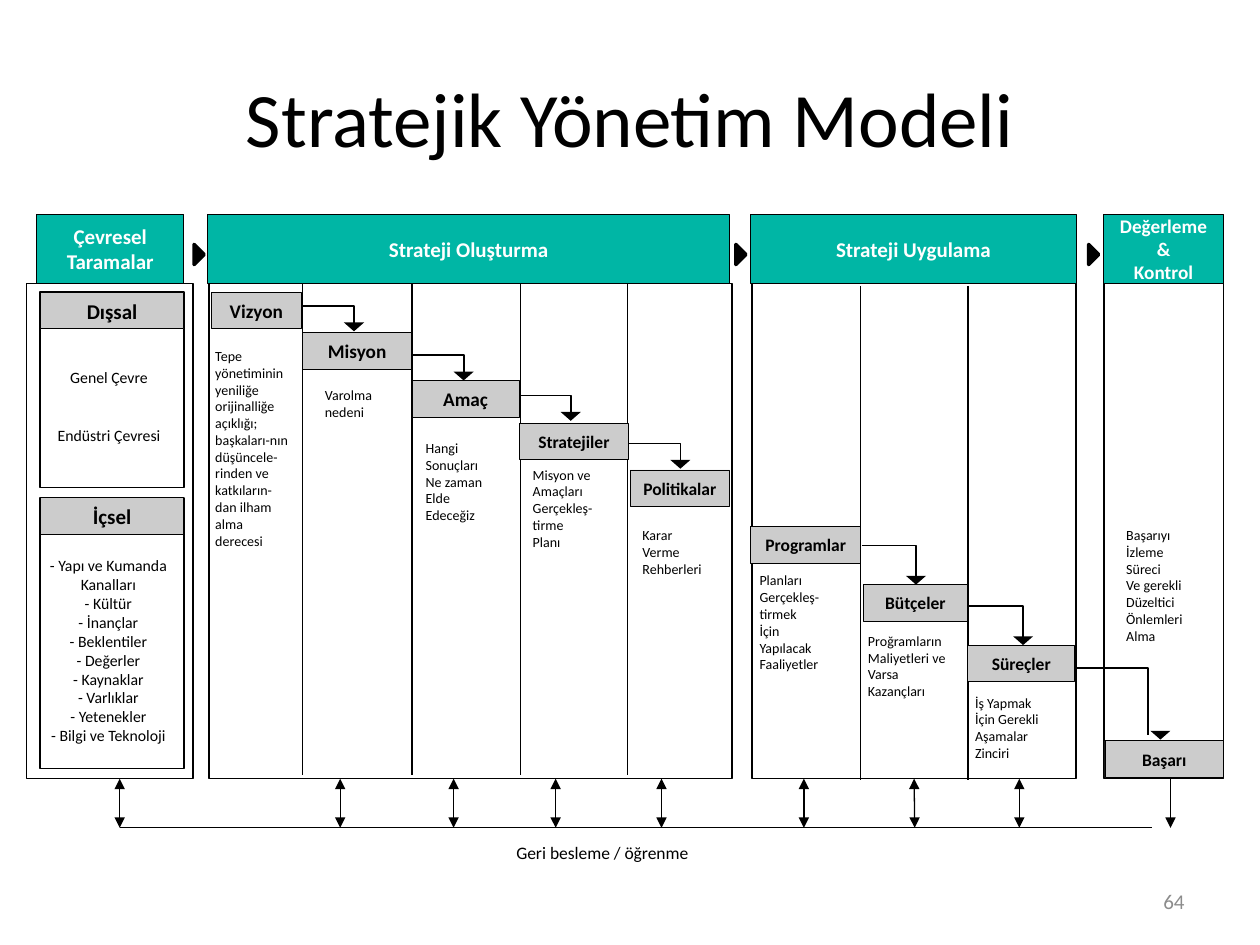
from pptx import Presentation
from pptx.dml.color import RGBColor
from pptx.enum.shapes import MSO_CONNECTOR, MSO_SHAPE
from pptx.enum.text import MSO_ANCHOR, PP_ALIGN
from pptx.oxml.ns import qn
from pptx.util import Inches, Pt
from lxml.etree import SubElement

THEME = {
    "font": "Calibri",
    "black": RGBColor(0x00, 0x00, 0x00),
    "white": RGBColor(0xFF, 0xFF, 0xFF),
    "teal": RGBColor(0x00, 0xB6, 0xA5),
    "gray": RGBColor(0xCC, 0xCC, 0xCC),
    "muted": RGBColor(0x8C, 0x8C, 0x8C),
    "title": 44, "header": 12, "small_header": 11, "step": 11, "small_step": 10,
    "list": 9, "note": 8, "footer": 10, "number": 12,
}

TITLE = "Stratejik Yönetim Modeli"
PAGE_NUMBER = "64"
FEEDBACK = "Geri besleme / öğrenme"

HEADER_TOP, HEADER_HEIGHT = 1.7, 0.55
PANEL_TOP, PANEL_BOTTOM = 2.25, 6.18
FEEDBACK_Y = 6.57
STEP_HEIGHT = 0.29

HEADERS = [
    (["Çevresel Taramalar"], 0.29, 1.17, "header"),
    (["Strateji Oluşturma"], 1.65, 4.14, "header"),
    (["Strateji Uygulama"], 5.96, 2.58, "header"),
    (["Değerleme", "&", "Kontrol"], 8.76, 0.95, "small_header"),
]
PANELS = [(0.21, 1.32), (1.66, 4.15), (5.97, 2.57), (8.76, 0.95)]
SCAN_FRAMES = [(2.32, 1.55), (3.95, 2.15)]
HEADER_MARKERS = [1.5, 5.8, 8.6]
DIVIDERS = [
    (2.24, 6.15, [2.4, 3.27, 4.13, 4.98]),
    (2.27, 6.19, [6.83, 7.68]),
]

STEPS = [
    ("Dışsal", 0.32, 2.32, 1.14, "header"),
    ("İçsel", 0.32, 3.95, 1.14, "header"),
    ("Vizyon", 1.68, 2.32, 0.71, "step"),
    ("Misyon", 2.4, 2.64, 0.87, "step"),
    ("Amaç", 3.27, 3.02, 0.85, "step"),
    ("Stratejiler", 4.12, 3.36, 0.87, "small_step"),
    ("Politikalar", 5, 3.73, 0.79, "small_step"),
    ("Programlar", 5.96, 4.18, 0.87, "small_step"),
    ("Bütçeler", 6.85, 4.64, 0.83, "small_step"),
    ("Süreçler", 7.68, 5.12, 0.85, "small_step"),
    ("Başarı", 8.77, 5.88, 0.94, "small_step"),
]

ELBOWS = [
    (2.4, 2.43, 0.41, 0.16, 0),
    (3.27, 2.82, 0.41, 0.16, 0),
    (4.12, 3.14, 0.41, 0.16, 0),
    (4.99, 3.52, 0.41, 0.16, 0),
    (6.84, 4.33, 0.43, 0.27, 0),
    (7.69, 4.81, 0.43, 0.27, 0),
    (8.38, 5.3, 0.73, 0.53, 0.1),
]

VISION_NOTE = ("Tepe yönetiminin yeniliğe orijinalliğe açıklığı; başkaları-nın "
               "düşüncele-rinden ve katkıların-dan ilham alma derecesi")
NOTES = [
    (["Varolma", "nedeni"], 2.48, 3.02, 0.62),
    (["Hangi", "Sonuçları", "Ne zaman", "Elde", "Edeceğiz"], 3.28, 3.44, 0.71),
    (["Misyon ve", "Amaçları", "Gerçekleş-", "tirme", "Planı"], 4.13, 3.65, 0.74),
    (["Karar", "Verme", "Rehberleri"], 5, 4.13, 0.72),
    (["Planları", "Gerçekleş-", "tirmek", "İçin", "Yapılacak", "Faaliyetler"], 5.93, 4.49, 0.74),
    (["Proğramların", "Maliyetleri ve", "Varsa", "Kazançları"], 6.79, 4.97, 0.85),
    (["İş Yapmak", "İçin Gerekli", "Aşamalar", "Zinciri"], 7.64, 5.46, 0.79),
    (["Başarıyı", "İzleme", "Süreci", "Ve gerekli", "Düzeltici", "Önlemleri", "Alma"],
     8.84, 4.13, 0.7),
]
EXTERNAL = ["Genel Çevre", "Endüstri Çevresi"]
INTERNAL = ["- Yapı ve Kumanda Kanalları", "- Kültür", "- İnançlar", "- Beklentiler",
            "- Değerler", "- Kaynaklar", "- Varlıklar", "- Yetenekler",
            "- Bilgi ve Teknoloji"]

TWO_WAY_ARROWS = [0.95, 2.7, 3.6, 4.41, 5.25, 6.38, 7.26, 8.09]
IMPLEMENTATION_ARROW = 7.26
PERFORMANCE_ARROW = 9.29


def write(shape, lines, size, color="black", bold=False, align=PP_ALIGN.LEFT,
          anchor=MSO_ANCHOR.TOP, side=0.1, wrap=True, gap=0):
    frame = shape.text_frame
    frame.word_wrap = wrap
    frame.vertical_anchor = anchor
    frame.margin_left = frame.margin_right = Inches(side)
    frame.margin_top = frame.margin_bottom = Inches(0.05)
    for index, line in enumerate(lines):
        para = frame.add_paragraph() if index else frame.paragraphs[0]
        para.alignment = align
        para.space_before = Pt(gap if index else 0)
        span = para.add_run()
        span.text = line
        span.font.name = THEME["font"]
        span.font.size = Pt(THEME[size])
        span.font.bold = bold
        span.font.color.rgb = THEME[color]


def add_text(page, lines, left, top, width, height, size, **style):
    box = page.shapes.add_textbox(*map(Inches, (left, top, width, height)))
    write(box, lines, size, **style)


def paint(shape, fill=None, line=None):
    shape.shadow.inherit = False
    if fill:
        shape.fill.solid()
        shape.fill.fore_color.rgb = THEME[fill]
    else:
        shape.fill.background()
    if line:
        shape.line.color.rgb = THEME["black"]
        shape.line.width = Pt(line)
    else:
        shape.line.fill.background()


def add_box(page, left, top, width, height, fill=None, line=1, kind=MSO_SHAPE.RECTANGLE):
    box = page.shapes.add_shape(kind, *map(Inches, (left, top, width, height)))
    paint(box, fill, line)
    return box


def add_outline(page, points, closed, fill=None, line=None):
    first, *rest = [(Inches(x), Inches(y)) for x, y in points]
    builder = page.shapes.build_freeform(*first, scale=1.0)
    builder.add_line_segments(rest, close=closed)
    paint(builder.convert_to_shape(), fill, line)


def add_line(page, x1, y1, x2, y2, width, ends=()):
    line = page.shapes.add_connector(MSO_CONNECTOR.STRAIGHT, *map(Inches, (x1, y1, x2, y2)))
    line.line.color.rgb = THEME["black"]
    line.line.width = Pt(width)
    outline = line.line._get_or_add_ln()
    for end in ends:
        SubElement(outline, qn(f"a:{end}"), type="triangle")
    SubElement(line._element.spPr, qn("a:effectLst"))
    return line


def add_elbow(page, left, top, run, drop, shift):
    x, y = left + run, top + drop
    add_outline(page, [(left, top), (x, top), (x, y)], False, line=1)
    tip, base = x + shift, y - 0.03
    add_outline(page, [(tip + 0.08, base), (tip - 0.08, base), (tip, base + 0.07)],
                True, fill="black")


def add_feedback(page, implementation):
    add_line(page, TWO_WAY_ARROWS[0], FEEDBACK_Y, 9.14, FEEDBACK_Y, 0.75)
    for x in TWO_WAY_ARROWS:
        arrow = add_line(page, x, PANEL_BOTTOM, x, FEEDBACK_Y, 0.75, ("headEnd", "tailEnd"))
        if x == IMPLEMENTATION_ARROW:
            arrow.begin_connect(implementation, 2)
    add_line(page, PERFORMANCE_ARROW, PANEL_BOTTOM, PERFORMANCE_ARROW, FEEDBACK_Y,
             0.75, ("tailEnd",))
    add_text(page, [FEEDBACK], 3.97, 6.63, 1.62, 0.43, "footer", align=PP_ALIGN.CENTER)


def main():
    deck = Presentation()
    deck.slide_width, deck.slide_height = Inches(10), Inches(7.5)
    page = deck.slides.add_slide(deck.slide_layouts[5])
    centered = {"align": PP_ALIGN.CENTER, "anchor": MSO_ANCHOR.MIDDLE}

    title = page.shapes.title
    title.left, title.top, title.width, title.height = map(Inches, (0.5, 0.3, 9, 1.25))
    write(title, [TITLE], "title", **centered)
    add_text(page, [PAGE_NUMBER], 7.17, 6.95, 2.33, 0.4, "number", color="muted",
             align=PP_ALIGN.RIGHT, anchor=MSO_ANCHOR.MIDDLE)

    panels = [add_box(page, left, PANEL_TOP, width, PANEL_BOTTOM - PANEL_TOP)
              for left, width in PANELS]
    for top, height in SCAN_FRAMES:
        add_box(page, 0.32, top, 1.14, height)
    for top, bottom, positions in DIVIDERS:
        for x in positions:
            add_line(page, x, top, x, bottom, 1)
    for elbow in ELBOWS:
        add_elbow(page, *elbow)

    for lines, left, width, size in HEADERS:
        header = add_box(page, left, HEADER_TOP, width, HEADER_HEIGHT, "teal", 0.5)
        write(header, lines, size, color="white", bold=True, side=0.05, **centered)
    for left in HEADER_MARKERS:
        marker = add_box(page, left, 1.98, 0.16, 0.08, "black", 2,
                         MSO_SHAPE.ISOSCELES_TRIANGLE)
        marker.rotation = 90
    for name, left, top, width, size in STEPS:
        step = add_box(page, left, top, width, STEP_HEIGHT, "gray", 0.5)
        write(step, [name], size, bold=True, side=0, **centered)

    add_text(page, EXTERNAL, 0.2, 2.87, 1.33, 0.7, "list", align=PP_ALIGN.CENTER, gap=22)
    add_text(page, INTERNAL, 0.29, 4.36, 1.14, 1.59, "list", align=PP_ALIGN.CENTER, side=0)
    add_text(page, [VISION_NOTE], 1.61, 2.71, 0.79, 1.84, "note")
    for lines, left, top, width in NOTES:
        add_text(page, lines, left, top, width, 0.1 + 0.13 * len(lines), "note", wrap=False)
    add_feedback(page, panels[2])
    deck.save("out.pptx")


if __name__ == "__main__":
    main()
